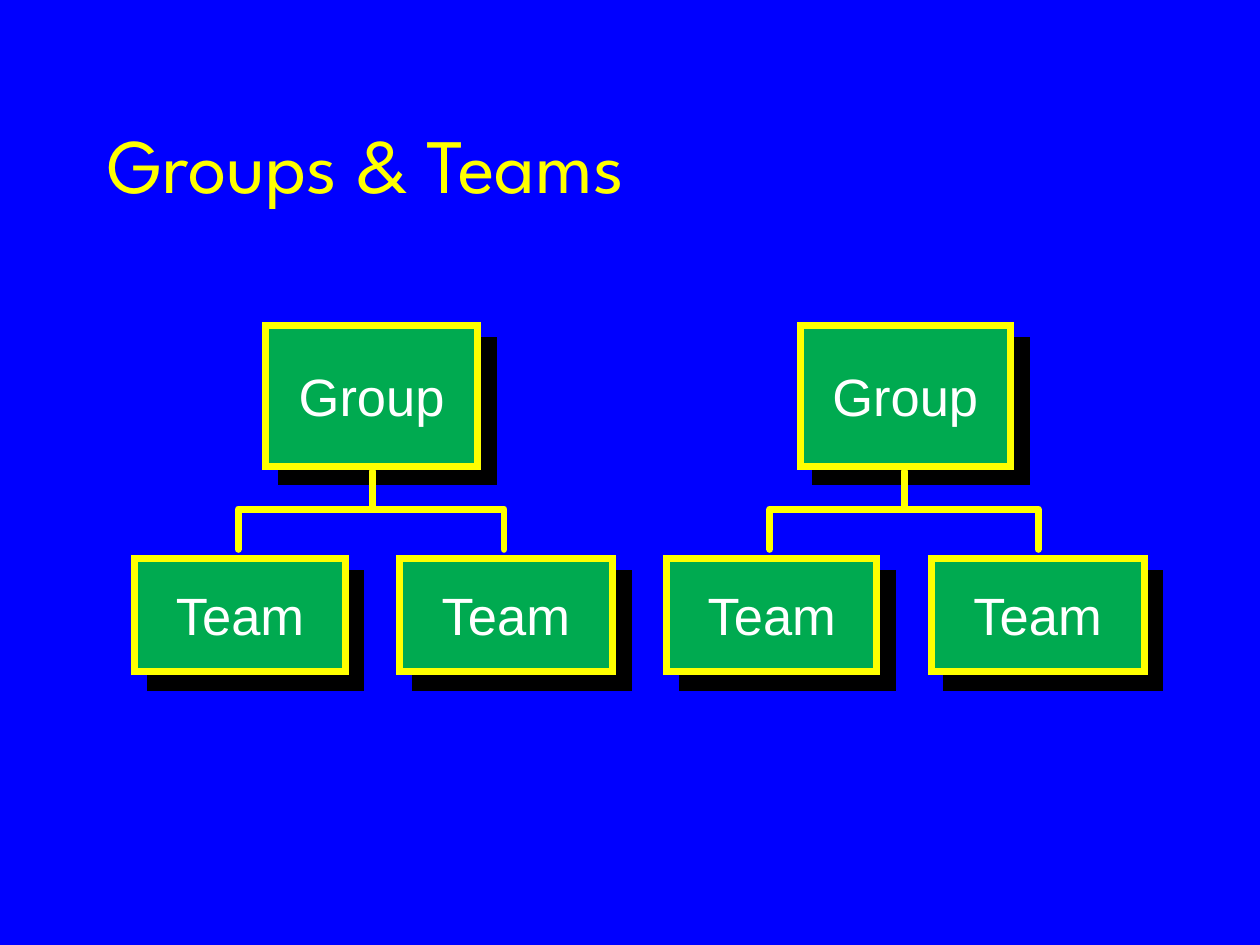
from lxml.etree import SubElement
from pptx import Presentation
from pptx.dml.color import RGBColor
from pptx.enum.shapes import MSO_SHAPE as Shape
from pptx.enum.text import MSO_ANCHOR as Anchor, MSO_AUTO_SIZE as AutoSize, PP_ALIGN as Align
from pptx.oxml.ns import qn
from pptx.util import Pt

TITLE = "Groups & Teams"
BLUE, GREEN, YELLOW, WHITE, BLACK = "0000FF", "00AA50", "FFFF00", "FFFFFF", "000000"
GROUP_ROW = {"top": 185.76, "height": 80.64, "label_width": 90.7}
TEAM_ROW = {"top": 318.96, "height": 64.8, "label_width": 80.6}
TREES = [
    {"group": ("Group", 151.92, 120.96),
     "teams": [("Team", 77.04, 120.24), ("Team", 228.24, 121.68)],
     "branch": (136.08, 213.12, 288)},
    {"group": ("Group", 457.2, 120.24),
     "teams": [("Team", 380.88, 120.24), ("Team", 532.08, 121.68)],
     "branch": (439.92, 516.96, 593.28)},
]
STEM_TOP, BAR_Y, BRANCH_BOTTOM = 269.28, 290.88, 313.92
LABEL_HEIGHT, LINE_WIDTH, SHADOW_DISTANCE = 40.3, 4, 12.7
FRAME_FORMAT = {"margin_left": Pt(1.5), "margin_right": Pt(1.5), "margin_top": Pt(2),
                "margin_bottom": Pt(2), "word_wrap": False}


def color(target, value):
    target.solid()
    target.fore_color.rgb = RGBColor.from_string(value)


def apply(target, formats):
    for name, value in formats.items():
        setattr(target, name, value)


def outline(shape, join):
    shape.shadow.inherit = False
    color(shape.line.fill, YELLOW)
    shape.line.width = Pt(LINE_WIDTH)
    line = shape.line.fill._xPr
    SubElement(line, qn(f"a:{join}"))
    if join == "round":
        line.set("cap", "rnd")


def write(paragraph, text, size, font, value):
    run = paragraph.add_run()
    run.text = text
    apply(run.font, {"size": Pt(size), "name": font})
    color(run.font.fill, value)


def add_box(shapes, item, row):
    text, left, width = item
    top, height, label_width = row["top"], row["height"], row["label_width"]
    box = shapes.add_shape(Shape.RECTANGLE, Pt(left), Pt(top), Pt(width), Pt(height))
    color(box.fill, GREEN)
    outline(box, "miter")
    effects = box._element.spPr.find(qn("a:effectLst"))
    shadow = SubElement(effects, qn("a:outerShdw"), dist=str(Pt(SHADOW_DISTANCE)),
                        dir="2700000", algn="ctr", rotWithShape="0")
    SubElement(shadow, qn("a:srgbClr"), val=BLACK)

    label = shapes.add_textbox(Pt(left + (width - label_width) / 2),
                               Pt(top + (height - LABEL_HEIGHT) / 2),
                               Pt(label_width), Pt(LABEL_HEIGHT))
    apply(label.text_frame, FRAME_FORMAT)
    paragraph = label.text_frame.paragraphs[0]
    apply(paragraph, {"alignment": Align.CENTER, "line_spacing": Pt(36)})
    write(paragraph, text, 30, "Arial", WHITE)


def add_branch(shapes, left, stem, right):
    points = [(left, BRANCH_BOTTOM), (left, BAR_Y), (right, BAR_Y), (right, BRANCH_BOTTOM),
              (right, BAR_Y), (stem, BAR_Y), (stem, STEM_TOP), (stem, BAR_Y)]
    start, *others = [(Pt(x), Pt(y)) for x, y in points]
    builder = shapes.build_freeform(*start)
    builder.add_line_segments(others, close=False)
    branch = builder.convert_to_shape()
    branch.fill.background()
    outline(branch, "round")


def main():
    """Build the slide of groups and their teams."""
    presentation = Presentation()
    apply(presentation, {"slide_width": Pt(720), "slide_height": Pt(540)})
    slide = presentation.slides.add_slide(presentation.slide_layouts[5])
    color(slide.background.fill, BLUE)

    title = slide.shapes.title
    apply(title, {"left": Pt(54), "top": Pt(48), "width": Pt(612), "height": Pt(90)})
    apply(title.text_frame, {"vertical_anchor": Anchor.MIDDLE, "auto_size": AutoSize.NONE})
    paragraph = title.text_frame.paragraphs[0]
    paragraph.alignment = Align.LEFT
    write(paragraph, TITLE, 44, "League Spartan", YELLOW)

    for tree in TREES:
        add_box(slide.shapes, tree["group"], GROUP_ROW)
        add_branch(slide.shapes, *tree["branch"])
        for team in tree["teams"]:
            add_box(slide.shapes, team, TEAM_ROW)
    presentation.save("out.pptx")


if __name__ == "__main__":
    main()
